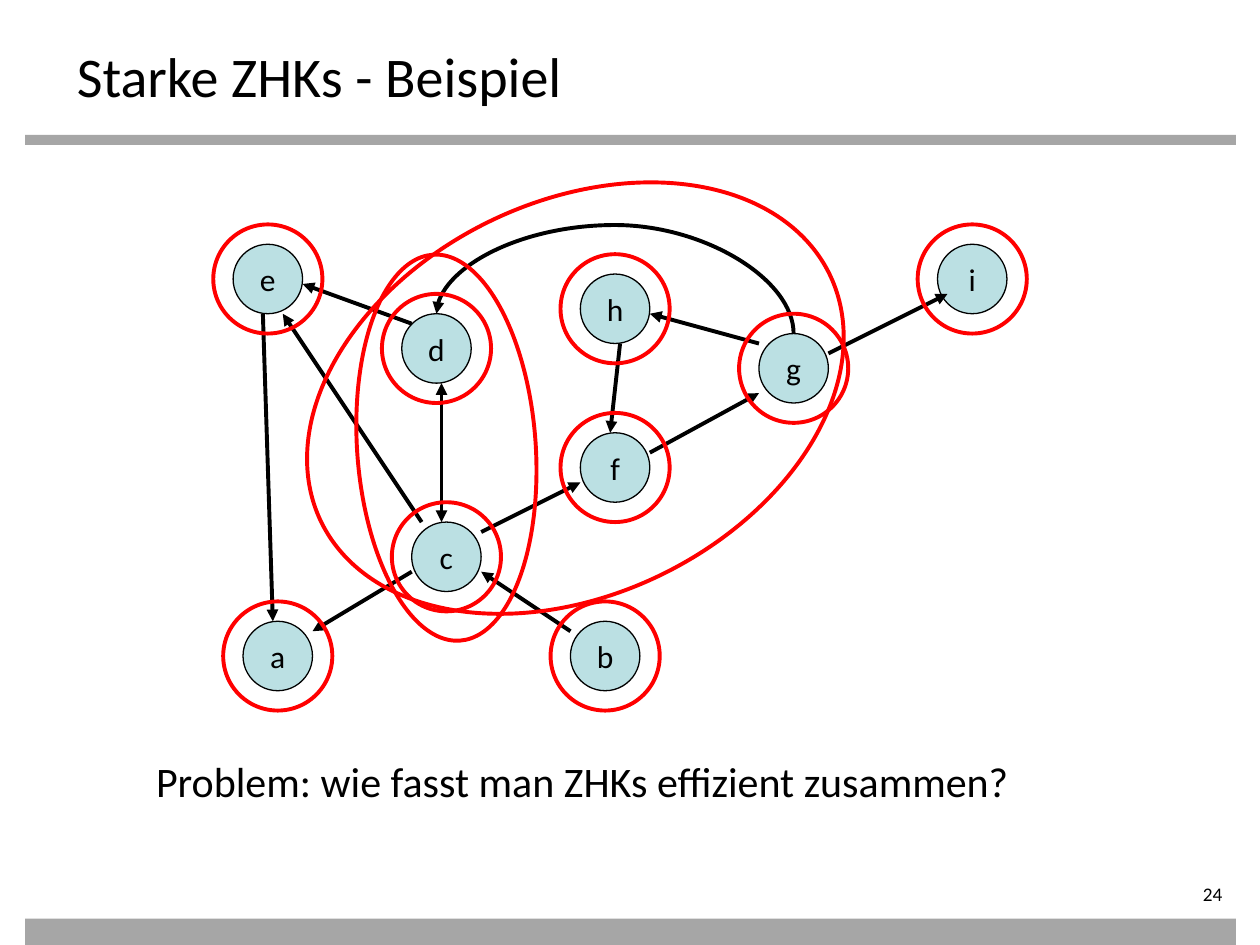
"""Build the slide on strongly connected components of a directed graph."""
from pptx import Presentation, util as u
from pptx.dml.color import RGBColor
from pptx.enum import shapes, text
from pptx.oxml import ns
from lxml import etree

CELL = 10 / 127
ROW_SHIFT = 0.01
NODE_RADIUS, RING_RADIUS = 3.5, 5.5
BLACK, GREY, RED, NODE_BLUE = "000000", "A6A6A6", "FF0000", "BBE0E3"

nodes = {
    "a": (28, 66), "b": (61, 66), "c": (45, 56), "d": (44, 35), "e": (27, 28),
    "f": (62, 47), "g": (80, 37), "h": (62, 31), "i": (98, 28),
}
edges = [
    (41.5, 57.5, 31.5, 63.5), (48.5, 53.5, 58.5, 48.5), (65.5, 45.5, 76.5, 39.5),
    (83.5, 35.5, 95.5, 29.5), (76.5, 34.5, 65.5, 31.5), (62.5, 34.5, 61.5, 43.5),
    (42.5, 52.5, 28.5, 31.5), (26.5, 31.5, 27.5, 62.5), (41.5, 32.5, 30.5, 28.5),
    (57.5, 63.5, 48.5, 57.5),
]
two_way_edge = (44.5, 52.5, 44.5, 38.5)
curved_edge = (63, 14.5, 61, 50.5)
components = [(45, 45, 18, 39, 356), (58, 40, 57, 39.6, 334)]
rings = [(*centre, 2 * RING_RADIUS, 2 * RING_RADIUS, 0) for centre in nodes.values()]

deck = Presentation()
deck.slide_width, deck.slide_height = u.Inches(10), u.Inches(7.5)
page = deck.slides.add_slide(deck.slide_layouts[5])


def paint(kind, left, top, width, height, fill=None, line=None, weight=0.75):
    """Add a preset shape with plain fill and line."""
    shape = page.shapes.add_shape(kind, *map(u.Inches, (left, top, width, height)))
    shape.shadow.inherit = False
    for part, colour in ((shape.fill, fill), (shape.line.fill, line)):
        if colour:
            part.solid()
            part.fore_color.rgb = RGBColor.from_string(colour)
        else:
            part.background()
    if line:
        shape.line.width = u.Pt(weight)
    return shape


def write(box, words, size, align=text.PP_ALIGN.LEFT):
    """Put one formatted paragraph into a shape."""
    para = box.text_frame.paragraphs[0]
    para.text, para.alignment = words, align
    para.font.name, para.font.size = "Calibri", u.Pt(size)
    para.font.color.rgb = RGBColor.from_string(BLACK)


for top, height in ((1.07, 0.08), (7.29, 0.21)):
    paint(shapes.MSO_SHAPE.RECTANGLE, 0.2, top, 9.61, height, GREY)

title = page.shapes.title
title.left, title.top, title.width, title.height = map(u.Inches, (0.51, 0.28, 9, 0.55))
title.text_frame.vertical_anchor = text.MSO_ANCHOR.TOP
title.text_frame.auto_size = text.MSO_AUTO_SIZE.NONE
write(title, "Starke ZHKs - Beispiel", 32)

for name, (column, row) in nodes.items():
    node = paint(shapes.MSO_SHAPE.OVAL, (column - NODE_RADIUS) * CELL,
                 (row - NODE_RADIUS) * CELL + ROW_SHIFT,
                 2 * NODE_RADIUS * CELL, 2 * NODE_RADIUS * CELL, NODE_BLUE, BLACK)
    node.text_frame.word_wrap = False
    node.text_frame.vertical_anchor = text.MSO_ANCHOR.MIDDLE
    write(node, name, 18, text.PP_ALIGN.CENTER)

for edge in [*edges, two_way_edge, curved_edge]:
    x1, y1, x2, y2 = (u.Inches(value * CELL + ROW_SHIFT * (index % 2))
                      for index, value in enumerate(edge))
    bend = edge == curved_edge
    kind = shapes.MSO_CONNECTOR.CURVE if bend else shapes.MSO_CONNECTOR.STRAIGHT
    arrow = page.shapes.add_connector(kind, x1, y1, x2, y2)
    arrow.line.width = u.Pt(2.25)
    arrow.line.color.rgb = RGBColor.from_string(BLACK)
    properties = arrow._element.spPr
    outline = properties.find(ns.qn("a:ln"))
    for end in ("a:headEnd", "a:tailEnd") if edge == two_way_edge else ("a:tailEnd",):
        etree.SubElement(outline, ns.qn(end), type="triangle")
    etree.SubElement(properties, ns.qn("a:effectLst"))
    if bend:
        properties.find(ns.qn("a:xfrm")).set("rot", str(90 * 60000))
        geometry = properties.find(ns.qn("a:prstGeom"))
        guides = geometry.find(ns.qn("a:avLst"))
        if guides is None:
            guides = etree.SubElement(geometry, ns.qn("a:avLst"))
        etree.SubElement(guides, ns.qn("a:gd"), name="adj1", fmla="val 547300")

for column, row, width, height, angle in rings + components:
    ring = paint(shapes.MSO_SHAPE.OVAL, (column - width / 2) * CELL,
                 (row - height / 2) * CELL + ROW_SHIFT,
                 width * CELL, height * CELL, line=RED, weight=2.25)
    ring.rotation = angle

question = page.shapes.add_textbox(*map(u.Inches, (1.14, 5.95, 7.74, 0.5)))
question.text_frame.word_wrap = False
question.text_frame.auto_size = text.MSO_AUTO_SIZE.SHAPE_TO_FIT_TEXT
write(question, "Problem: wie fasst man ZHKs effizient zusammen?", 24)

number = page.shapes.add_textbox(*map(u.Inches, (8.7, 7, 1.1, 0.22)))
frame = number.text_frame
frame.word_wrap = True
frame.margin_left = frame.margin_top = frame.margin_bottom = 0
write(number, "24", 11, text.PP_ALIGN.RIGHT)

deck.save("out.pptx")
